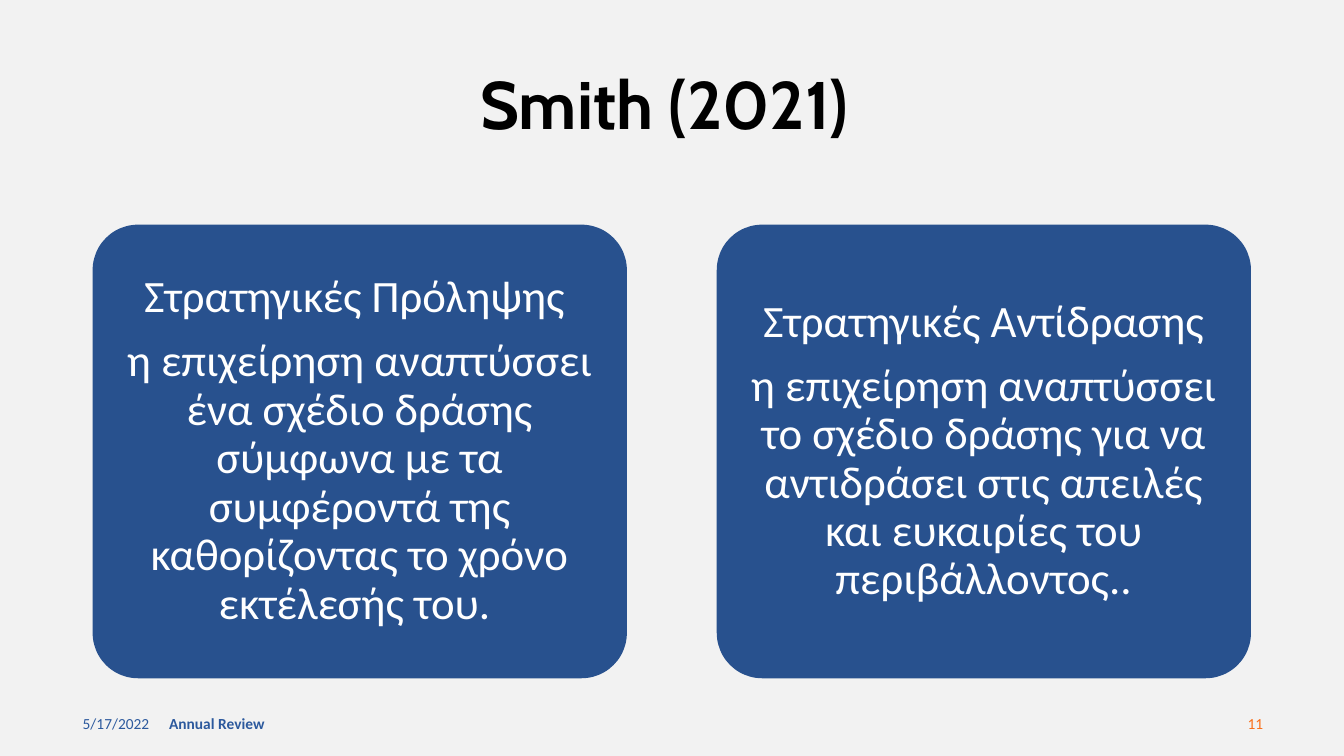
from dataclasses import dataclass

import pptx
import pptx.dml.color
import pptx.enum.shapes
import pptx.enum.text
import pptx.util

Pt = pptx.util.Pt
Align = pptx.enum.text.PP_ALIGN
MIDDLE = pptx.enum.text.MSO_ANCHOR.MIDDLE

BACKGROUND, BLACK, WHITE = "F2F2F2", "000000", "FFFFFF"
CARD_BLUE, FOOTER_BLUE, ORANGE = "28518E", "2C599D", "FA6F1A"


@dataclass
class Label:
    text: str
    left: float
    top: float
    width: float
    height: float
    size: float
    color: str
    font: str = "Calibri"
    bold: bool = False
    align: Align = Align.LEFT
    line_spacing: float = 1.0


@dataclass
class Card:
    heading: str
    body: str


FOOTER_TOP, FOOTER_HEIGHT = 502.5, 29
LABELS = [
    Label("5/17/2022", 52, FOOTER_TOP, 216, FOOTER_HEIGHT, 11, FOOTER_BLUE),
    Label("Annual Review", 113.7, FOOTER_TOP, 324, FOOTER_HEIGHT, 11,
          FOOTER_BLUE, bold=True),
    Label("11", 693.5, FOOTER_TOP, 216, FOOTER_HEIGHT, 11, ORANGE,
          align=Align.RIGHT),
    Label("Smith (2021) ", 66, 49.5, 828, 55.5, 48, BLACK, font="Cabin",
          bold=True, align=Align.CENTER, line_spacing=0.9),
]

CARDS = [
    Card("Στρατηγικές Πρόληψης ",
         "η επιχείρηση αναπτύσσει ένα σχέδιο δράσης σύμφωνα με τα "
         "συμφέροντά της καθορίζοντας το χρόνο εκτέλεσής του. "),
    Card("Στρατηγικές Αντίδρασης",
         "η επιχείρηση αναπτύσσει το σχέδιο δράσης για να αντιδράσει "
         "στις απειλές και ευκαιρίες του περιβάλλοντος.."),
]
CARD_LEFT, CARD_TOP = 66.2, 160.5
CARD_WIDTH, CARD_HEIGHT, CARD_GAP = 381.6, 324, 64.2
CARD_INSET = 9.6


def rgb(color: str) -> pptx.dml.color.RGBColor:
    return pptx.dml.color.RGBColor.from_string(color)


def style_paragraph(para, font: str, size: float, color: str,
                    bold: bool, align: Align, line_spacing: float) -> None:
    para.alignment = align
    para.line_spacing = line_spacing
    para.font.name = font
    para.font.size = Pt(size)
    para.font.bold = bold
    para.font.color.rgb = rgb(color)


def add_label(page, label: Label) -> None:
    box = page.shapes.add_textbox(Pt(label.left), Pt(label.top),
                                  Pt(label.width), Pt(label.height))
    frame = box.text_frame
    frame.word_wrap = True
    frame.vertical_anchor = MIDDLE
    frame.text = label.text
    style_paragraph(frame.paragraphs[0], label.font, label.size, label.color,
                    label.bold, label.align, label.line_spacing)


def add_card(page, card: Card, left: float) -> None:
    shape = page.shapes.add_shape(
        pptx.enum.shapes.MSO_SHAPE.ROUNDED_RECTANGLE,
        Pt(left), Pt(CARD_TOP), Pt(CARD_WIDTH), Pt(CARD_HEIGHT))
    shape.adjustments[0] = 0.1
    shape.shadow.inherit = False
    shape.fill.solid()
    shape.fill.fore_color.rgb = rgb(CARD_BLUE)
    shape.line.fill.background()

    frame = shape.text_frame
    frame.word_wrap = True
    frame.vertical_anchor = MIDDLE
    frame.margin_left = frame.margin_right = Pt(CARD_INSET)
    frame.margin_top = frame.margin_bottom = Pt(CARD_INSET)
    frame.text = f"{card.heading}\n{card.body}"
    for para in frame.paragraphs:
        style_paragraph(para, "Calibri", 32, WHITE, False, Align.CENTER, 0.9)
    frame.paragraphs[0].space_after = Pt(11.2)


def main() -> None:
    deck = pptx.Presentation()
    deck.slide_width, deck.slide_height = Pt(960), Pt(540)
    page = deck.slides.add_slide(deck.slide_layouts[6])
    page.background.fill.solid()
    page.background.fill.fore_color.rgb = rgb(BACKGROUND)
    for label in LABELS:
        add_label(page, label)
    for column, card in enumerate(CARDS):
        add_card(page, card, CARD_LEFT + column * (CARD_WIDTH + CARD_GAP))
    deck.save("out.pptx")


if __name__ == "__main__":
    main()
